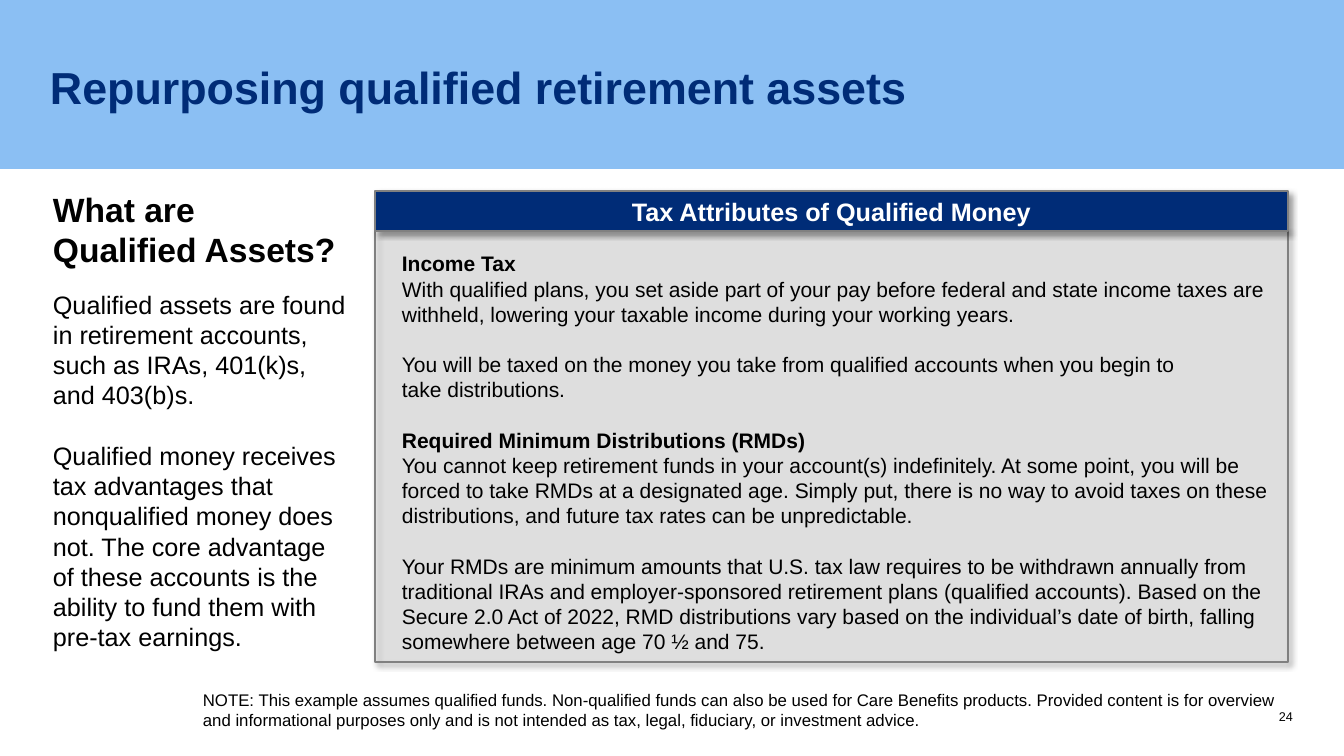
from dataclasses import dataclass

from lxml import etree
from pptx import Presentation
from pptx import util as u
from pptx.dml import color
from pptx.enum import shapes, text
from pptx.oxml import ns

SCALE = 914400 / 100.8  # EMU in one px


@dataclass(frozen=True)
class Theme:
    font: str = "Arial"
    navy: str = "002C77"
    sky: str = "8BBFF3"
    panel: str = "D9D9D9"
    edge: str = "808080"
    black: str = "000000"
    white: str = "FFFFFF"
    title: int = 32
    head: int = 24
    body: int = 18
    detail: int = 15
    note: int = 12
    page: int = 9


T = Theme()
ALIGN = text.PP_ALIGN
ANCHOR = text.MSO_ANCHOR

# Each paragraph: words, bold, set apart from the one before
ASSETS = [
    ("Qualified assets are found in retirement accounts, such as IRAs, 401(k)s, "
     "and 403(b)s.", False, False),
    ("Qualified money receives tax advantages that nonqualified money does not. "
     "The core advantage of these accounts is the ability to fund them with "
     "pre-tax earnings.", False, True),
]
TAXES = [
    ("Income Tax", True, False),
    ("With qualified plans, you set aside part of your pay before federal and state "
     "income taxes are withheld, lowering your taxable income during your working "
     "years.", False, False),
    ("You will be taxed on the money you take from qualified accounts when you begin "
     "to \vtake distributions.", False, True),
    ("Required Minimum Distributions (RMDs)", True, True),
    ("You cannot keep retirement funds in your account(s) indefinitely. At some point, "
     "you will be forced to take RMDs at a designated age. Simply put, there is no way "
     "to avoid taxes on these distributions, and future tax rates can be "
     "unpredictable.", False, False),
    ("Your RMDs are minimum amounts that U.S. tax law requires to be withdrawn annually "
     "from traditional IRAs and employer-sponsored retirement plans (qualified "
     "accounts). Based on the Secure 2.0 Act of 2022, RMD distributions vary based on "
     "the individual’s date of birth, falling somewhere between age 70 ½ and 75.",
     False, True),
]
NOTE = ("NOTE: This example assumes qualified funds. Non-qualified funds can also be "
        "used for Care Benefits products. Provided content is for overview and "
        "informational purposes only and is not intended as tax, legal, fiduciary, or "
        "investment advice.")


def px(n):
    return u.Emu(round(n * SCALE))


def rgb(code):
    return color.RGBColor.from_string(code)


def write(frame, paras, size, ink=T.black, align=ALIGN.LEFT):
    """Fill a frame; a gap is one line high (1.2 times the size)."""
    frame.word_wrap = True
    for i, (words, bold, gap) in enumerate(paras):
        p = frame.paragraphs[0] if i == 0 else frame.add_paragraph()
        p.text = words
        p.alignment = align
        if gap:
            p.space_before = u.Pt(size * 1.2)
        for run in p.runs:
            font = run.font
            font.name, font.size, font.bold = T.font, u.Pt(size), bold
            font.color.rgb = rgb(ink)


def label(slide, box, paras, size, ink=T.black, align=ALIGN.LEFT):
    """Text box that grows with its text."""
    frame = slide.shapes.add_textbox(*map(px, box)).text_frame
    write(frame, paras, size, ink, align)
    frame.auto_size = text.MSO_AUTO_SIZE.SHAPE_TO_FIT_TEXT
    return frame


def fix(frame, anchor):
    """Fixed height, no margins."""
    frame.auto_size = text.MSO_AUTO_SIZE.NONE
    frame.vertical_anchor = anchor
    frame.margin_left = frame.margin_right = 0
    frame.margin_top = frame.margin_bottom = 0


def block(slide, box, fill):
    shape = slide.shapes.add_shape(shapes.MSO_SHAPE.RECTANGLE, *map(px, box))
    shape.shadow.inherit = False
    shape.fill.solid()
    shape.fill.fore_color.rgb = rgb(fill)
    shape.line.fill.background()
    return shape


def fade(node, share):
    etree.SubElement(node, ns.qn("a:alpha"), val=str(share * 1000))


def card(slide, box, fill):
    """Edged block with a soft shadow to the lower right."""
    shape = block(slide, box, fill)
    shape.line.color.rgb = rgb(T.edge)
    shape.line.width = u.Pt(1.5)
    effects = shape.element.spPr.find(ns.qn("a:effectLst"))
    shade = etree.SubElement(
        effects, ns.qn("a:outerShdw"), blurRad=str(u.Pt(4)), dist=str(u.Pt(3)),
        dir=str(45 * 60000), algn="tl", rotWithShape="0")
    fade(etree.SubElement(shade, ns.qn("a:srgbClr"), val=T.black), 40)
    return shape


def main():
    deck = Presentation()
    deck.slide_width, deck.slide_height = px(1344), px(756)
    slide = deck.slides.add_slide(deck.slide_layouts[6])

    # Page number and title band
    page = label(slide, (1254, 699, 39, 25), [("24", False, False)], T.page,
                 align=ALIGN.RIGHT)
    fix(page, ANCHOR.BOTTOM)
    block(slide, (0, 0, 1344, 169), T.sky)
    title = label(slide, (50, 32, 1243, 117),
                  [("Repurposing qualified retirement assets", True, False)],
                  T.title, T.navy)
    fix(title, ANCHOR.MIDDLE)
    title.paragraphs[0].line_spacing = 0.9

    # Left column
    label(slide, (43, 184, 529, 92),
          [("What are", True, False), ("Qualified Assets?", True, False)], T.head)
    label(slide, (43, 284, 320, 377), ASSETS, T.body)

    # Tax panel
    panel = card(slide, (375, 231, 913, 431), T.panel)
    fade(panel.element.spPr.find(ns.qn("a:solidFill"))[0], 30)
    label(slide, (392, 246, 896, 417), TAXES, T.detail)
    bar = card(slide, (375, 191, 913, 40), T.navy)
    write(bar.text_frame, [("Tax Attributes of Qualified Money", True, False)],
          T.body, T.white, ALIGN.CENTER)

    # Footnote
    label(slide, (193, 685, 1102, 50), [(NOTE, False, False)], T.note)

    deck.save("out.pptx")


if __name__ == "__main__":
    main()
